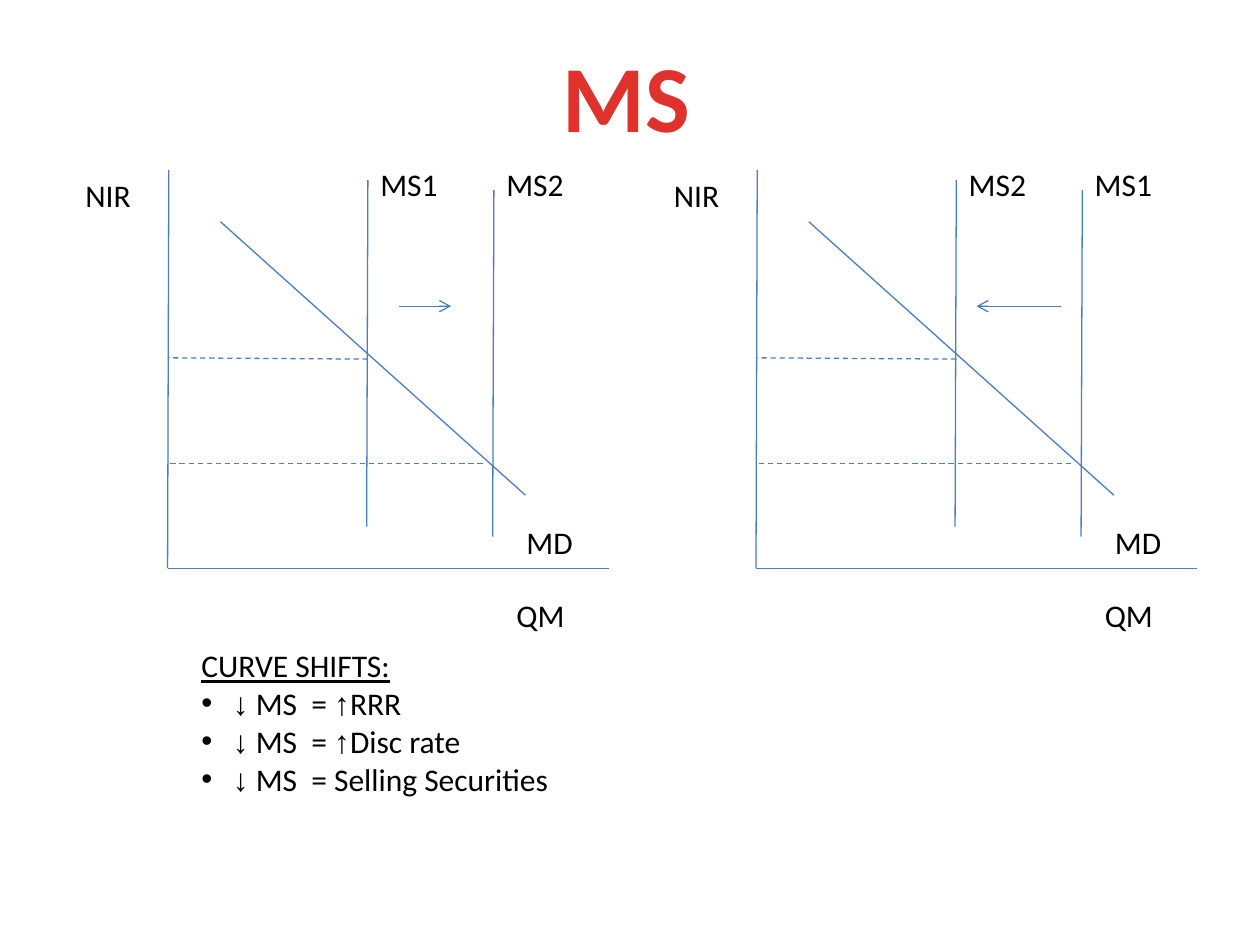
from dataclasses import dataclass
from itertools import groupby

from lxml import etree
from pptx import Presentation
from pptx import util as u
from pptx.dml.color import RGBColor
from pptx.enum import dml, shapes, text
from pptx.oxml import ns

BLUE = "4B7EBC"
BLACK = "000000"
RED = "E0322D"
GRAPH_STEP = 4.67
ARROWS = "↓↑"


@dataclass
class Line:
    x1: float
    y1: float
    x2: float
    y2: float
    dashed: bool = False
    arrow: bool = False


@dataclass
class Label:
    words: str
    left: float
    top: float
    width: float


@dataclass
class Graph:
    left: float
    supplies: tuple[str, str]
    shift: tuple[float, float]


AXES_AND_CURVES = [
    Line(1.34, 1.35, 1.33, 4.51),
    Line(1.33, 4.51, 4.83, 4.51),
    Line(1.75, 1.76, 4.17, 3.93),
    Line(2.92, 1.43, 2.91, 4.18),
    Line(3.92, 1.51, 3.91, 4.26),
    Line(2.92, 2.85, 1.33, 2.84, dashed=True),
    Line(3.83, 3.68, 1.33, 3.68, dashed=True),
]
AXIS_LABELS = [
    Label("NIR", 0.58, 1.35, 0.56),
    Label("MD", 4.08, 4.1, 0.57),
    Label("QM", 4, 4.68, 0.59),
]
GRAPHS = [
    Graph(0, ("MS1", "MS2"), (3.17, 3.58)),
    Graph(GRAPH_STEP, ("MS2", "MS1"), (3.75, 3.08)),
]
SHIFTS = ["↓ MS  = ↑RRR", "↓ MS  = ↑Disc rate", "↓ MS  = Selling Securities"]


def color(value: str) -> RGBColor:
    return RGBColor.from_string(value)


def style(font, size: float, fill: str, name: str = "Calibri") -> None:
    font.name = name
    font.size = u.Pt(size)
    font.color.rgb = color(fill)


def draw_line(slide, line: Line, offset: float) -> None:
    connector = slide.shapes.add_connector(
        shapes.MSO_CONNECTOR.STRAIGHT,
        u.Inches(line.x1 + offset), u.Inches(line.y1),
        u.Inches(line.x2 + offset), u.Inches(line.y2),
    )
    connector.line.color.rgb = color(BLUE)
    connector.line.width = u.Pt(0.75)
    if line.dashed:
        connector.line.dash_style = dml.MSO_LINE.DASH
    if line.arrow:
        outline = connector.line._get_or_add_ln()
        etree.SubElement(outline, ns.qn("a:tailEnd"), type="arrow")
    etree.SubElement(connector._element.spPr, ns.qn("a:effectLst"))


def add_frame(slide, left: float, top: float, width: float, height: float):
    box = slide.shapes.add_textbox(
        u.Inches(left), u.Inches(top), u.Inches(width), u.Inches(height)
    )
    box.text_frame.word_wrap = False
    box.text_frame.auto_size = text.MSO_AUTO_SIZE.SHAPE_TO_FIT_TEXT
    return box.text_frame


def draw_label(slide, label: Label, offset: float) -> None:
    frame = add_frame(slide, label.left + offset, label.top, label.width, 0.4)
    frame.text = label.words
    style(frame.paragraphs[0].runs[0].font, 18, BLACK)


def draw_graph(slide, graph: Graph) -> None:
    start, end = graph.shift
    shift = Line(start, 2.43, end, 2.43, arrow=True)
    for line in [*AXES_AND_CURVES, shift]:
        draw_line(slide, line, graph.left)
    supply_labels = [
        Label(name, 2.92 + i, 1.26, 0.66) for i, name in enumerate(graph.supplies)
    ]
    for label in AXIS_LABELS + supply_labels:
        draw_label(slide, label, graph.left)


def add_bullet(frame, words: str) -> None:
    paragraph = frame.add_paragraph()
    properties = paragraph._p.get_or_add_pPr()
    indent = u.Inches(0.25)
    properties.set("marL", str(indent))
    properties.set("indent", str(-indent))
    etree.SubElement(properties, ns.qn("a:buFont"), typeface="Arial")
    etree.SubElement(properties, ns.qn("a:buChar"), char="•")
    for is_arrow, letters in groupby(words, key=lambda letter: letter in ARROWS):
        run = paragraph.add_run()
        run.text = "".join(letters)
        style(run.font, 18, BLACK, "Arial" if is_arrow else "Calibri")


def draw_title(slide) -> None:
    title = slide.shapes.title
    title.left, title.top = u.Inches(4.35), u.Inches(0.25)
    title.width, title.height = u.Inches(1.24), u.Inches(1.01)
    frame = title.text_frame
    frame.word_wrap = False
    frame.auto_size = text.MSO_AUTO_SIZE.NONE
    frame.text = "MS"
    frame.paragraphs[0].alignment = text.PP_ALIGN.CENTER
    font = frame.paragraphs[0].runs[0].font
    style(font, 54, RED)
    font.bold = True


def draw_shifts(slide) -> None:
    frame = add_frame(slide, 1.5, 5.08, 2.99, 1.31)
    frame.text = "CURVE SHIFTS:"
    heading = frame.paragraphs[0].runs[0].font
    style(heading, 18, BLACK)
    heading.underline = True
    for words in SHIFTS:
        add_bullet(frame, words)


def main() -> None:
    deck = Presentation()
    deck.slide_width, deck.slide_height = u.Inches(10), u.Inches(7.5)
    slide = deck.slides.add_slide(deck.slide_layouts[5])
    draw_title(slide)
    for graph in GRAPHS:
        draw_graph(slide, graph)
    draw_shifts(slide)
    deck.save("out.pptx")


if __name__ == "__main__":
    main()
